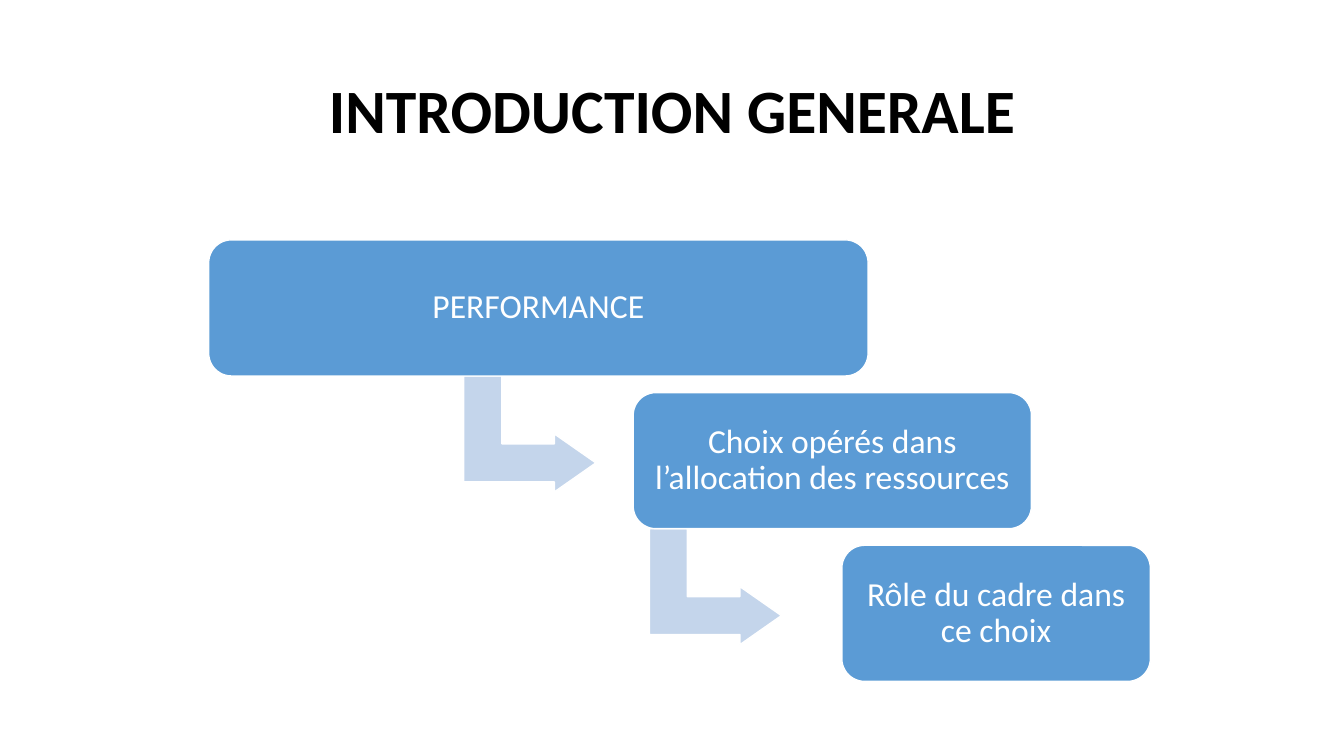
from dataclasses import dataclass

from pptx import Presentation
from pptx.dml.color import RGBColor
from pptx.enum.shapes import MSO_SHAPE
from pptx.enum.text import MSO_ANCHOR, PP_ALIGN
from pptx.shapes.autoshape import Shape
from pptx.slide import Slide
from pptx.util import Inches, Pt


@dataclass(frozen=True)
class Theme:
    font: str = "Calibri"
    ink: RGBColor = RGBColor(0, 0, 0)
    white: RGBColor = RGBColor(255, 255, 255)
    box: RGBColor = RGBColor(0x5B, 0x9B, 0xD5)
    arrow: RGBColor = RGBColor(0xC4, 0xD5, 0xEB)
    title: Pt = Pt(44)
    body: Pt = Pt(24)
    line: Pt = Pt(1)


@dataclass(frozen=True)
class Step:
    text: str
    left: float
    width: float
    arrow: float | None = None  # left edge of the arrow to the next step


THEME = Theme()
TOP, PITCH, HEIGHT = 2.38, 1.515, 1.35
DROP = 1.27  # from the top of a step to the top of its arrow
STEPS = [
    Step("PERFORMANCE", 2.07, 6.54, 4.68),
    Step("Choix opérés dans l’allocation des ressources", 6.28, 3.95, 6.52),
    Step("Rôle du cadre dans ce choix", 8.35, 3.06),
]


def write(shape: Shape, text: str, size: Pt, color: RGBColor,
          bold: bool = False) -> None:
    frame = shape.text_frame
    frame.word_wrap = True
    frame.vertical_anchor = MSO_ANCHOR.MIDDLE
    para = frame.paragraphs[0]
    para.text = text
    para.alignment = PP_ALIGN.CENTER
    para.line_spacing = 0.9
    font = para.font
    font.name, font.size, font.bold = THEME.font, size, bold
    font.color.rgb = color


def draw(slide: Slide, kind: MSO_SHAPE, left: float, top: float, width: float,
         height: float, fill: RGBColor, adjust: list[float]) -> Shape:
    shape = slide.shapes.add_shape(
        kind, Inches(left), Inches(top), Inches(width), Inches(height))
    shape.shadow.inherit = False
    shape.fill.solid()
    shape.fill.fore_color.rgb = fill
    shape.line.color.rgb = THEME.white
    shape.line.width = THEME.line
    for i, value in enumerate(adjust):
        shape.adjustments[i] = value
    return shape


def add_step(slide: Slide, step: Step, top: float) -> None:
    # Arrow leading down to the next step
    if step.arrow is not None:
        arrow = draw(slide, MSO_SHAPE.BENT_UP_ARROW, step.arrow, top + DROP,
                     1.15, 1.31, THEME.arrow, [0.328, 0.25, 0.358])
        arrow.rotation = 90

    # Box with its label
    box = draw(slide, MSO_SHAPE.ROUNDED_RECTANGLE, step.left, top,
               step.width, HEIGHT, THEME.box, [0.167])
    frame = box.text_frame
    frame.margin_left = frame.margin_right = Inches(0.1)
    frame.margin_top = frame.margin_bottom = Inches(0.1)
    write(box, step.text, THEME.body, THEME.white)


def main() -> None:
    deck = Presentation()
    deck.slide_width, deck.slide_height = Inches(13.33), Inches(7.5)
    slide = deck.slides.add_slide(deck.slide_layouts[6])

    # Title
    title = slide.shapes.add_textbox(
        Inches(0.92), Inches(0.4), Inches(11.5), Inches(1.45))
    write(title, "INTRODUCTION GENERALE", THEME.title, THEME.ink, bold=True)

    # Staircase of steps
    for i, step in enumerate(STEPS):
        add_step(slide, step, TOP + i * PITCH)

    deck.save("out.pptx")


if __name__ == "__main__":
    main()
